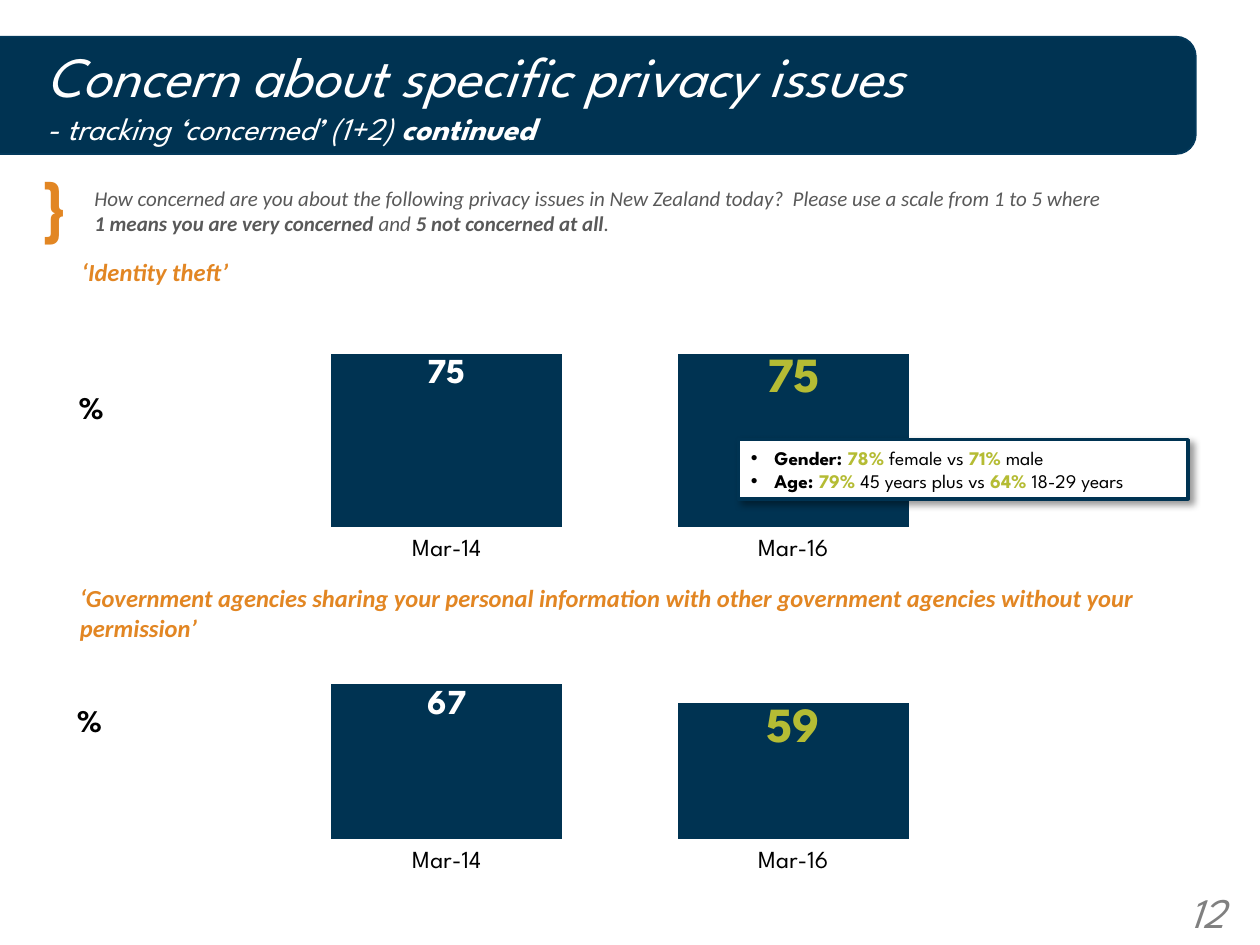
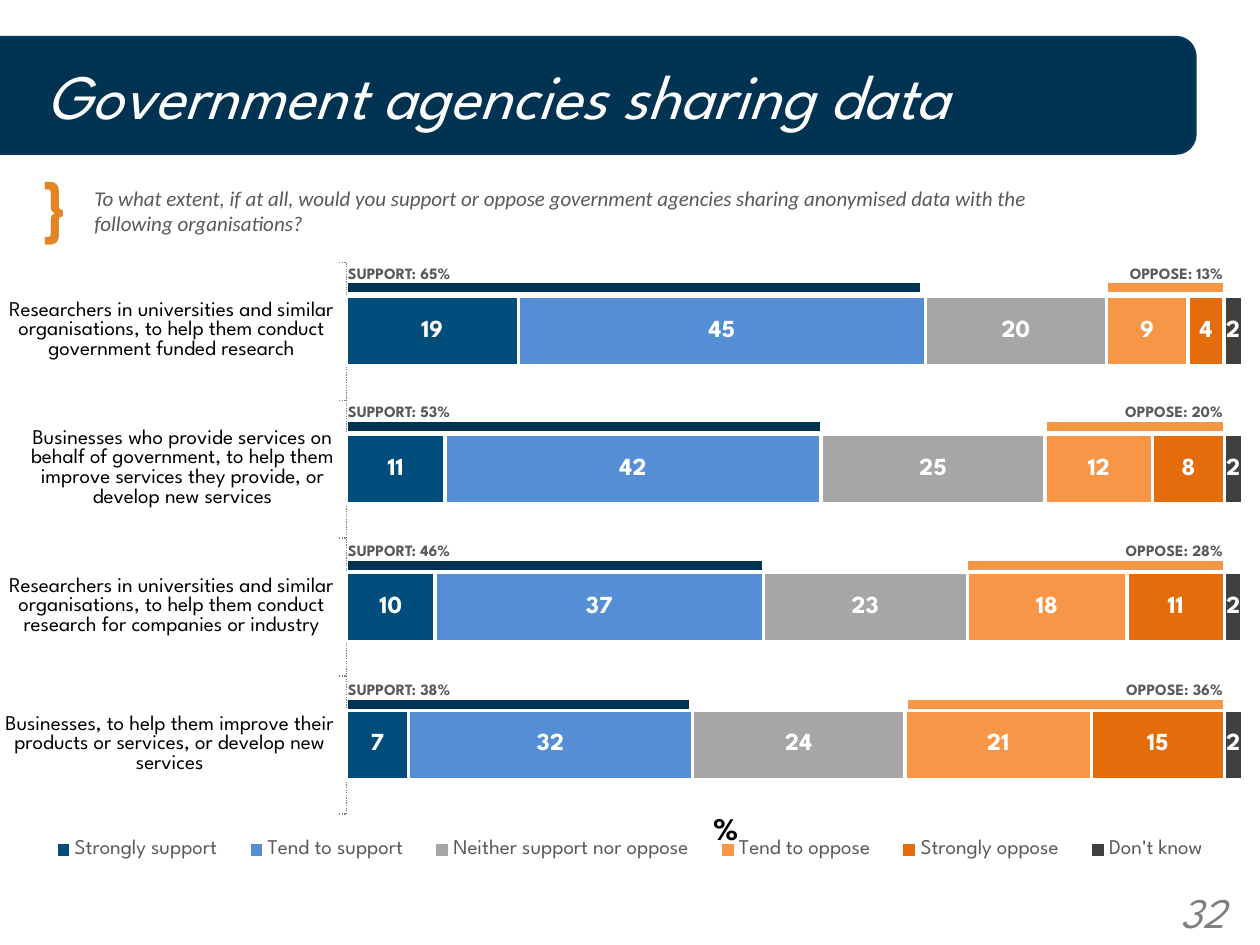
"""Build two survey slides on privacy concern and government data sharing."""
from dataclasses import dataclass

import pptx
import pptx.chart.data
import pptx.dml.color
import pptx.enum.chart
import pptx.enum.dml
import pptx.enum.shapes
import pptx.enum.text
import pptx.oxml
import pptx.oxml.ns
import pptx.util
from lxml import etree

Pt = pptx.util.Pt
qn = pptx.oxml.ns.qn
MIDDLE = pptx.enum.text.MSO_ANCHOR.MIDDLE
LEFT = pptx.enum.text.PP_ALIGN.LEFT
RIGHT = pptx.enum.text.PP_ALIGN.RIGHT
LABEL_AT = pptx.enum.chart.XL_LABEL_POSITION


@dataclass(frozen=True)
class Theme:
    """Colours, fonts and type sizes of the deck."""
    navy: str = "003352"
    band_edge: str = "03395B"
    orange: str = "E28623"
    lime: str = "B5BC34"
    grey: str = "595959"
    page_grey: str = "808080"
    white: str = "FFFFFF"
    black: str = "000000"
    support: str = "004C7B"
    tend_support: str = "558ED5"
    neutral: str = "A6A6A6"
    tend_oppose: str = "F79646"
    oppose: str = "E46C0A"
    unknown: str = "404040"
    display: str = "League Spartan"
    body: str = "Calibri"
    brace: float = 40
    title: float = 36
    title_split: float = 32.4
    highlight: float = 28
    page: float = 24
    value: float = 20
    subtitle: float = 18
    heading: float = 14
    text: float = 12
    callout: float = 11
    tally: float = 9


THEME = Theme()


def rgb(color):
    """Turn a hex string into a colour."""
    return pptx.dml.color.RGBColor.from_string(color)


def set_font(font, size=None, color=None, name=None, bold=None, italic=None):
    """Set the given traits of a font."""
    if size:
        font.size = Pt(size)
    if color:
        font.color.rgb = rgb(color)
    if name:
        font.name = name
    if bold is not None:
        font.bold = bold
    if italic is not None:
        font.italic = italic


def write(paragraph, pieces, align=LEFT, **style):
    """Fill a paragraph with (text, traits) pieces in one common style."""
    paragraph.alignment = align
    set_font(paragraph.font, **style)
    for text, traits in pieces:
        if text == "\n":
            paragraph.add_line_break()
        else:
            run = paragraph.add_run()
            run.text = text
            set_font(run.font, **traits)


def add_text(slide, box, pieces, anchor=None, inset=None, wrap=True, **style):
    """Add a one-paragraph text box."""
    frame = slide.shapes.add_textbox(*map(Pt, box)).text_frame
    frame.word_wrap = wrap
    if anchor is not None:
        frame.vertical_anchor = anchor
    if inset is not None:
        frame.margin_left = frame.margin_right = Pt(inset)
        frame.margin_top = frame.margin_bottom = Pt(inset)
    if isinstance(pieces, str):
        pieces = [(pieces, {})]
    write(frame.paragraphs[0], pieces, **style)


def add_box(slide, preset, box, fill, edge, edge_width):
    """Add a filled preset shape without the default shadow."""
    shape = slide.shapes.add_shape(preset, *map(Pt, box))
    shape.shadow.inherit = False
    shape.fill.solid()
    shape.fill.fore_color.rgb = rgb(fill)
    shape.line.color.rgb = rgb(edge)
    shape.line.width = Pt(edge_width)
    return shape


def start_slide(deck, title_pieces, title_size, question, page):
    """Add a slide with its title band, question and page number."""
    slide = deck.slides.add_slide(deck.slide_layouts[5])
    title = slide.shapes.title
    title.left, title.top, title.width, title.height = map(Pt, (19.5, 19.5, 648, 68.4))
    frame = title.text_frame
    frame.word_wrap = True
    frame.auto_size = pptx.enum.text.MSO_AUTO_SIZE.NONE
    frame.vertical_anchor = MIDDLE
    write(frame.paragraphs[0], title_pieces, size=title_size, name=THEME.display,
          color=THEME.white, italic=True)
    band = add_box(slide, pptx.enum.shapes.MSO_SHAPE.ROUNDED_RECTANGLE,
                   (-26, 21, 709.3, 67), THEME.navy, THEME.band_edge, 1)
    title.element.addprevious(band.element)
    add_text(slide, (24, 91.5, 19.5, 48), "}", inset=0, size=THEME.brace,
             name=THEME.display, color=THEME.orange, bold=True)
    add_text(slide, (46.8, 100, 593.3, 41), question, anchor=MIDDLE, size=THEME.text,
             name=THEME.body, color=THEME.grey, italic=True)
    add_text(slide, (539.3, 503.3, 167.8, 28.8), page, align=RIGHT, size=THEME.page,
             name=THEME.display, color=THEME.page_grey, italic=True)
    return slide


def add_heading(slide, box, text, wrap=True):
    """Add the name of a privacy issue above its chart."""
    add_text(slide, box, text, wrap=wrap, size=THEME.heading, name=THEME.body,
             color=THEME.orange, bold=True, italic=True)


def add_percent_sign(slide, left, top):
    """Add the unit sign beside a chart."""
    add_text(slide, (left, top, 22, 22), "%", anchor=MIDDLE, inset=0, size=THEME.subtitle,
             name=THEME.display, color=THEME.black, bold=True)


def place(part, index, bounds, inner=False):
    """Give a chart part a fixed place as fractions of the chart."""
    for old in part.findall(qn("c:layout")):
        part.remove(old)
    layout = etree.Element(qn("c:layout"))
    manual = etree.SubElement(layout, qn("c:manualLayout"))
    settings = [("layoutTarget", "inner")] if inner else []
    settings += [("xMode", "edge"), ("yMode", "edge")]
    settings += list(zip("xywh", map(str, bounds)))
    for tag, value in settings:
        etree.SubElement(manual, qn(f"c:{tag}")).set("val", value)
    part.insert(index, layout)


def add_bar_chart(slide, kind, box, categories, series, plot_bounds, gap, axis_size,
                  label_size, label_at):
    """Add a bar chart from (name, values, colour) series."""
    data = pptx.chart.data.CategoryChartData(number_format="0")
    data.categories = categories
    for name, values, _ in series:
        data.add_series(name, values)
    chart = slide.shapes.add_chart(kind, *map(Pt, box), data).chart
    chart.has_title = False
    chart.has_legend = False
    set_font(chart.font, THEME.subtitle, THEME.black, THEME.display)
    set_font(chart.category_axis.tick_labels.font, axis_size, THEME.black, THEME.display)
    chart.category_axis.format.line.fill.background()
    chart.value_axis.visible = False
    chart.value_axis.has_major_gridlines = False
    plot = chart.plots[0]
    plot.vary_by_categories = False
    plot.gap_width = gap
    for bars, (_, _, color) in zip(plot.series, series):
        bars.format.fill.solid()
        bars.format.fill.fore_color.rgb = rgb(color)
        labels = bars.data_labels
        labels.show_value = True
        labels.position = label_at
        set_font(labels.font, label_size, THEME.white, THEME.display, bold=True)
    place(chart.element.find(".//" + qn("c:plotArea")), 0, plot_bounds, inner=True)
    return chart


def add_tracking_chart(slide, left, top, values):
    """Add a two-wave column chart with the latest value highlighted."""
    chart = add_bar_chart(
        slide, pptx.enum.chart.XL_CHART_TYPE.COLUMN_CLUSTERED, (left, top, 656, 192.2),
        ("Mar-14", "Mar-16"), [("Series 1", values, THEME.navy)],
        (0.175, 0.045, 0.604, 0.825), 50, THEME.heading, THEME.value, LABEL_AT.INSIDE_END)
    chart.value_axis.minimum_scale = 0
    chart.value_axis.maximum_scale = 120
    latest = chart.plots[0].series[0].points[1].data_label
    set_font(latest.font, THEME.highlight, THEME.lime, THEME.display, bold=True)
    latest.position = LABEL_AT.INSIDE_END


def add_callout(slide, box, facts):
    """Add a shadowed box of bulleted facts."""
    callout = add_box(slide, pptx.enum.shapes.MSO_SHAPE.RECTANGLE, box, THEME.white,
                      THEME.navy, 2)
    effects = callout.element.spPr.find(qn("a:effectLst"))
    shadow = etree.SubElement(effects, qn("a:outerShdw"), blurRad=str(Pt(4)),
                              dist=str(Pt(3)), dir="2700000", algn="tl", rotWithShape="0")
    tint = etree.SubElement(shadow, qn("a:srgbClr"), val=THEME.black)
    etree.SubElement(tint, qn("a:alpha"), val="40000")
    frame = callout.text_frame
    frame.word_wrap = True
    frame.vertical_anchor = pptx.enum.text.MSO_ANCHOR.TOP
    for index, pieces in enumerate(facts):
        paragraph = frame.add_paragraph() if index else frame.paragraphs[0]
        layout = paragraph._p.get_or_add_pPr()
        layout.set("marL", str(Pt(13.5)))
        layout.set("indent", str(Pt(-13.5)))
        etree.SubElement(layout, qn("a:buFont"), typeface="Arial")
        etree.SubElement(layout, qn("a:buChar"), char="•")
        write(paragraph, pieces, size=THEME.callout, name=THEME.display, color=THEME.black)


def add_tally(slide, label, label_box, start, end, y, color, align):
    """Add a total label with the thick line that spans its bars."""
    line = slide.shapes.add_connector(pptx.enum.shapes.MSO_CONNECTOR.STRAIGHT,
                                      Pt(start), Pt(y), Pt(end), Pt(y))
    line.line.color.rgb = rgb(color)
    line.line.width = Pt(5)
    etree.SubElement(line.element.spPr, qn("a:effectLst"))
    add_text(slide, label_box, label, align=align, size=THEME.tally, name=THEME.display,
             color=THEME.grey, bold=True)


def build_concern_slide(deck):
    """Build the slide that tracks concern about two privacy issues."""
    strong, figure = {"bold": True}, {"bold": True, "color": THEME.lime}
    slide = start_slide(
        deck,
        [("Concern about specific privacy issues", {}), ("\n", {}),
         ("- tracking ‘concerned’ (1+2) ", {"size": THEME.subtitle}),
         ("continued", {"size": THEME.subtitle, "bold": True})],
        THEME.title_split,
        [("How concerned are you about the following privacy issues in New Zealand today?  "
          "Please use a scale from 1 to 5 where ", {}),
         ("1 means you are very concerned", strong), (" and ", {}),
         ("5 not concerned at all", strong), (".", {})],
        "12")
    add_tracking_chart(slide, 41.5, 134, (75, 75))
    add_heading(slide, (39.6, 143.3, 99.4, 24.5), "‘Identity theft’", wrap=False)
    add_percent_sign(slide, 45, 221.5)
    add_tracking_chart(slide, 41.5, 312.5, (67, 59))
    add_heading(slide, (38.6, 329.8, 630, 41),
                "‘Government agencies sharing your personal information with other "
                "government agencies without your permission’")
    add_percent_sign(slide, 44, 400.5)
    add_callout(slide, (422, 251.3, 257, 33.8), [
        [("Gender: ", strong), ("78%", figure), (" female vs ", {}), ("71%", figure),
         (" male", {})],
        [("Age: ", strong), ("79% ", figure), ("45 years plus vs ", {}), ("64% ", figure),
         ("18-29 years", {})]])


def build_sharing_slide(deck):
    """Build the slide on support for sharing anonymised data."""
    slide = start_slide(
        deck, [("Government agencies sharing data", {})], THEME.title,
        "To what extent, if at all, would you support or oppose government agencies sharing "
        "anonymised data with the following organisations?", "32")
    researchers = "Researchers in universities and similar organisations, to help them conduct "
    chart = add_bar_chart(
        slide, pptx.enum.chart.XL_CHART_TYPE.BAR_STACKED_100, (0, 144.7, 720, 368),
        (researchers + "government funded research",
         "Businesses who provide services on behalf of government, to help them improve "
         "services they provide, or develop new services",
         researchers + "research for companies or industry",
         "Businesses, to help them improve their products or services, or develop new services"),
        [("Strongly support", (19, 11, 10, 7), THEME.support),
         ("Tend to support", (45, 42, 37, 32), THEME.tend_support),
         ("Neither support nor oppose", (20, 25, 23, 24), THEME.neutral),
         ("Tend to oppose", (9, 12, 18, 21), THEME.tend_oppose),
         ("Strongly oppose", (4, 8, 11, 15), THEME.oppose),
         ("Don't know", (2, 2, 2, 2), THEME.unknown)],
        (0.275, 0.014, 0.711, 0.857), 100, THEME.text, THEME.heading, LABEL_AT.CENTER)
    chart.plots[0].overlap = 100
    for bars in chart.plots[0].series:
        bars.format.line.color.rgb = rgb(THEME.white)
        bars.format.line.width = Pt(2)
    axis = chart.category_axis
    axis.reverse_order = True
    axis.format.line.color.rgb = rgb(THEME.page_grey)
    axis.format.line.width = Pt(0.75)
    axis.format.line.dash_style = pptx.enum.dml.MSO_LINE.ROUND_DOT
    chart.has_legend = True
    chart.legend.position = pptx.enum.chart.XL_LEGEND_POSITION.BOTTOM
    chart.legend.include_in_layout = False
    set_font(chart.legend.font, THEME.text, THEME.grey, THEME.display)
    place(chart.legend._element, 1, (0.025, 0.897, 0.95, 0.06))
    add_percent_sign(slide, 407.5, 462)
    tallies = ((65, 525.6, 13, 633), (53, 468.7, 20, 598.3),
               (46, 435.6, 28, 553), (38, 394, 36, 519))
    for row, (support, support_end, oppose, oppose_start) in enumerate(tallies):
        y = 164.5 + 79.3 * row
        add_tally(slide, f"SUPPORT: {support}%", (191.8, y - 17.5, 189.4, 15),
                  198.7, support_end, y, THEME.navy, LEFT)
        add_tally(slide, f"OPPOSE: {oppose}%", (584, y - 17.5, 121.7, 15.8),
                  oppose_start, 698.7, y, THEME.tend_oppose, RIGHT)


def main():
    """Build and save the deck."""
    deck = pptx.Presentation()
    deck.slide_width, deck.slide_height = Pt(720), Pt(540)
    build_concern_slide(deck)
    build_sharing_slide(deck)
    deck.save("out.pptx")


if __name__ == "__main__":
    main()
